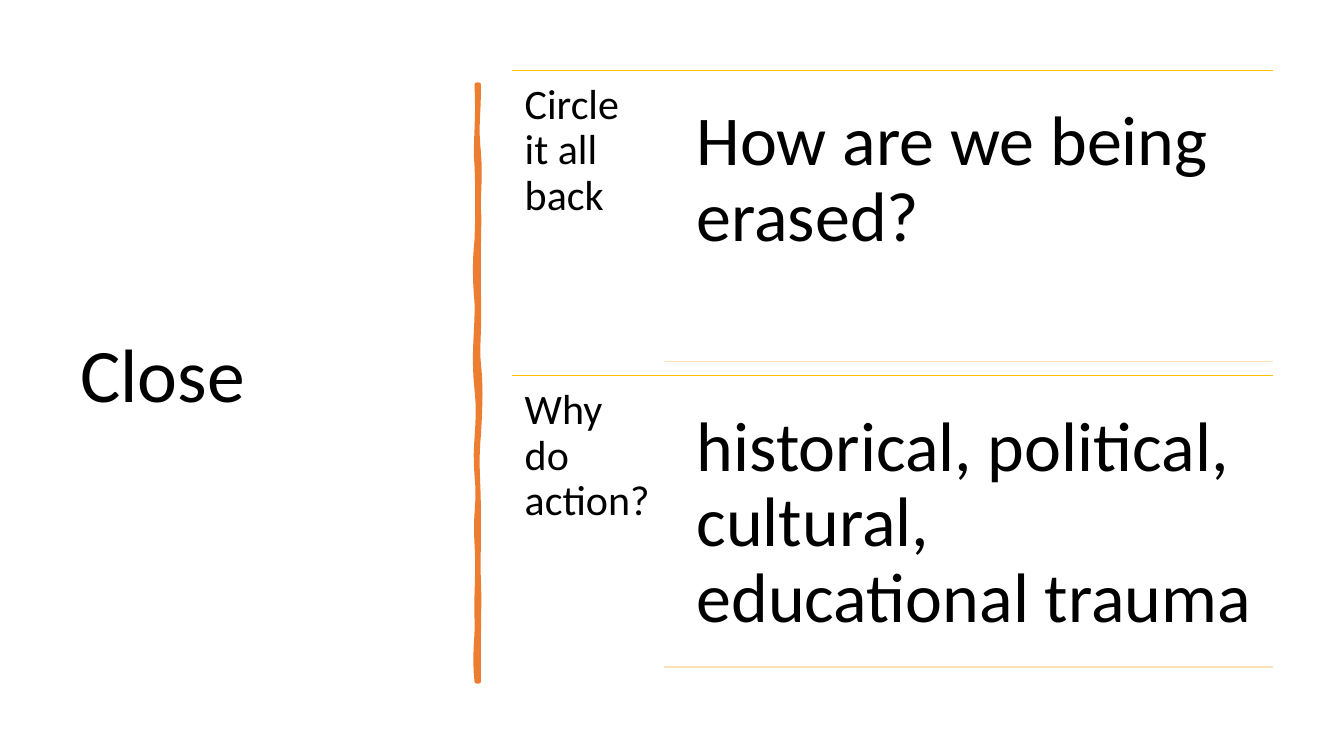
"""Build the closing slide with its title, brushed divider and two question rows."""
from lxml.etree import SubElement
from pptx import Presentation
from pptx.dml.color import RGBColor
from pptx.enum.shapes import MSO_CONNECTOR
from pptx.enum.text import MSO_ANCHOR
from pptx.oxml.ns import qn
from pptx.util import Pt

BLACK = RGBColor(0x00, 0x00, 0x00)
ORANGE = RGBColor(0xED, 0x7D, 0x31)
GOLD = RGBColor(0xFF, 0xC0, 0x00)
PALE_GOLD = RGBColor(0xFF, 0xE2, 0xBA)

RIGHT_EDGE = [
    (342, 60.5),
    (342, 82.8), (339.8, 90), (342, 109.4),
    (343.4, 128.9), (341.3, 141.8), (342, 149.8),
    (342.7, 158.4), (341.3, 183.6), (342, 211.7),
    (342.7, 239.8), (340.6, 247), (342, 260.6),
    (343.4, 274.3), (343.4, 285.8), (342, 309.6),
    (339.8, 333.4), (342, 341.3), (342, 371.5),
    (342, 401), (341.3, 398.2), (342, 416.2),
    (342.7, 434.2), (341.3, 465.8), (342, 486.7),
]
LEFT_EDGE = [
    (340.6, 486.7),
    (338.4, 467.3), (341.3, 455), (340.6, 441.4),
    (339.8, 428.4), (342, 409.7), (340.6, 388.1),
    (339.1, 367.2), (342.7, 360), (340.6, 339.1),
    (338.4, 318.2), (343.4, 302.4), (340.6, 277.9),
    (337.7, 252.7), (341.3, 234), (340.6, 216),
    (339.1, 198), (339.1, 186.5), (340.6, 171.4),
    (341.3, 155.5), (341.3, 133.2), (340.6, 118.1),
    (339.1, 103), (342, 87.1), (340.6, 60.5),
]

ROWS = [
    ("Circle it all back", "How are we being erased?"),
    ("Why do action?", "historical, political, cultural, educational trauma"),
]
ROW_TOP, ROW_HEIGHT = 50.4, 218
LABEL_LEFT, RULE_LEFT, RULE_RIGHT = 365.8, 474.5, 909.4


def trace_curve(points, steps=8):
    """Return points along a chain of cubic curves."""
    traced = [points[0]]
    for index in range(0, len(points) - 1, 3):
        curve = points[index:index + 4]
        for step in range(1, steps + 1):
            t = step / steps
            weights = ((1 - t) ** 3, 3 * t * (1 - t) ** 2, 3 * t * t * (1 - t), t ** 3)
            traced.append(tuple(sum(w * p[axis] for w, p in zip(weights, curve)) for axis in (0, 1)))
    return traced


class SlideBuilder:
    """Hold the text style and the slide that elements are added to."""

    text_style = {"name": "Calibri", "bold": False}

    def __init__(self, slide):
        self.slide = slide

    def add_text(self, text, box, size, margins, anchor=MSO_ANCHOR.TOP):
        """Add a wrapped text box."""
        shape = self.slide.shapes.add_textbox(*map(Pt, box))
        horizontal, vertical = map(Pt, margins)
        frame_format = {
            "word_wrap": True, "vertical_anchor": anchor,
            "margin_left": horizontal, "margin_right": horizontal,
            "margin_top": vertical, "margin_bottom": vertical,
        }
        for name, value in frame_format.items():
            setattr(shape.text_frame, name, value)
        paragraph = shape.text_frame.paragraphs[0]
        paragraph.line_spacing = 0.9
        run = paragraph.add_run()
        run.text = text
        for name, value in {**self.text_style, "size": Pt(size)}.items():
            setattr(run.font, name, value)
        run.font.color.rgb = BLACK

    def add_rule(self, left, right, top, color):
        """Add a thin horizontal line."""
        rule = self.slide.shapes.add_connector(
            MSO_CONNECTOR.STRAIGHT, Pt(left), Pt(top), Pt(right), Pt(top))
        rule.line.color.rgb = color
        rule.line.width = Pt(1)
        SubElement(rule.element.spPr, qn("a:effectLst"))

    def add_outline(self, points, color, line_width):
        """Add a closed filled outline."""
        vertices = [(Pt(x), Pt(y)) for x, y in points]
        builder = self.slide.shapes.build_freeform(*vertices[0])
        builder.add_line_segments(vertices[1:], close=True)
        shape = builder.convert_to_shape()
        shape.shadow.inherit = False
        shape.fill.solid()
        shape.fill.fore_color.rgb = color
        shape.line.color.rgb = color
        shape.line.width = Pt(line_width)


def main():
    """Create the presentation and save it."""
    presentation = Presentation()
    presentation.slide_width, presentation.slide_height = Pt(960), Pt(540)
    builder = SlideBuilder(presentation.slides.add_slide(presentation.slide_layouts[6]))

    builder.add_text("Close", (50.3, 49.9, 269.3, 439.9), 54, (7.2, 3.6), MSO_ANCHOR.MIDDLE)
    builder.add_outline(trace_curve(RIGHT_EDGE) + trace_curve(LEFT_EDGE), ORANGE, 3.25)

    for index, (label, answer) in enumerate(ROWS):
        top = ROW_TOP + index * ROW_HEIGHT
        builder.add_rule(LABEL_LEFT, RULE_RIGHT, top, GOLD)
        builder.add_text(label, (LABEL_LEFT, top, 108.7, ROW_HEIGHT), 30, (9, 9))
        builder.add_text(answer, (482.8, top + 9.9, 430, 198), 50, (14.8, 15))
        builder.add_rule(RULE_LEFT, RULE_RIGHT, top + 208, PALE_GOLD)

    presentation.save("out.pptx")


if __name__ == "__main__":
    main()
